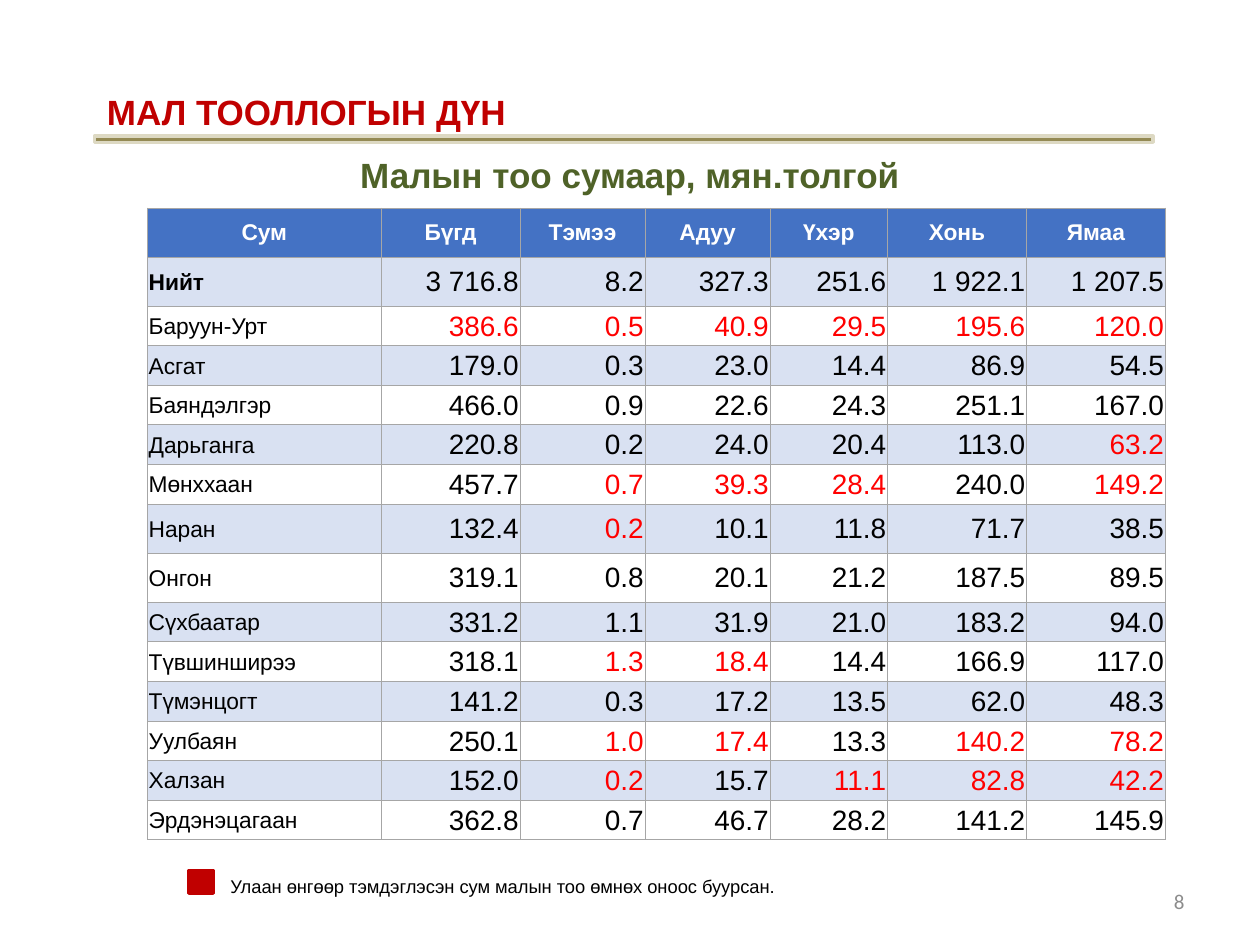
from lxml.etree import SubElement
from pptx import Presentation
from pptx.dml.color import RGBColor
from pptx.enum.shapes import MSO_SHAPE as SHAPE
from pptx.enum.text import MSO_ANCHOR as ANCHOR, PP_ALIGN as ALIGN
from pptx.oxml.ns import qn
from pptx.util import Inches, Pt

HEADER = ["Сум", "Бүгд", "Тэмээ", "Адуу", "Үхэр", "Хонь", "Ямаа"]
DECLINE = "*"
HERDS = [
    ("Нийт", "3 716.8", "8.2", "327.3", "251.6", "1 922.1", "1 207.5"),
    ("Баруун-Урт", "386.6*", "0.5*", "40.9*", "29.5*", "195.6*", "120.0*"),
    ("Асгат", "179.0", "0.3", "23.0", "14.4", "86.9", "54.5"),
    ("Баяндэлгэр", "466.0", "0.9", "22.6", "24.3", "251.1", "167.0"),
    ("Дарьганга", "220.8", "0.2", "24.0", "20.4", "113.0", "63.2*"),
    ("Мөнххаан", "457.7", "0.7*", "39.3*", "28.4*", "240.0", "149.2*"),
    ("Наран", "132.4", "0.2*", "10.1", "11.8", "71.7", "38.5"),
    ("Онгон", "319.1", "0.8", "20.1", "21.2", "187.5", "89.5"),
    ("Сүхбаатар", "331.2", "1.1", "31.9", "21.0", "183.2", "94.0"),
    ("Түвшинширээ", "318.1", "1.3*", "18.4*", "14.4", "166.9", "117.0"),
    ("Түмэнцогт", "141.2", "0.3", "17.2", "13.5", "62.0", "48.3"),
    ("Уулбаян", "250.1", "1.0*", "17.4*", "13.3", "140.2*", "78.2*"),
    ("Халзан", "152.0", "0.2*", "15.7", "11.1*", "82.8*", "42.2*"),
    ("Эрдэнэцагаан", "362.8", "0.7", "46.7", "28.2", "141.2", "145.9"),
]

DARK_RED = RGBColor(0xC0, 0x00, 0x00)
RED = RGBColor(0xFF, 0x00, 0x00)
GREEN = RGBColor(0x4F, 0x62, 0x28)
OLIVE = RGBColor(0x94, 0x8A, 0x54)
SAND = RGBColor(0xDD, 0xD9, 0xC3)
BLUE = RGBColor(0x44, 0x72, 0xC4)
PALE_BLUE = RGBColor(0xD9, 0xE1, 0xF2)
GRAY = RGBColor(0x8C, 0x8C, 0x8C)
BLACK = RGBColor(0, 0, 0)
WHITE = RGBColor(0xFF, 0xFF, 0xFF)
BORDER = "A6A6A6"

TEXTS = [
    ("8", (7.17, 6.95, 2.33, 0.4), ALIGN.RIGHT, ANCHOR.MIDDLE,
     {"size": Pt(12), "name": "Calibri"}, GRAY),
    ("МАЛ ТООЛЛОГЫН ДҮН", (0.75, 0.67, 9.25, 0.44), ALIGN.JUSTIFY, ANCHOR.TOP,
     {"size": Pt(20), "name": "Arial", "bold": True}, DARK_RED),
    ("Малын тоо сумаар, мян.толгой", (0.75, 1.17, 8.5, 0.44), ALIGN.CENTER, ANCHOR.TOP,
     {"size": Pt(20), "name": "Arial", "bold": True}, GREEN),
    ("Улаан өнгөөр тэмдэглэсэн сум малын тоо өмнөх оноос буурсан.",
     (1.73, 6.9, 5.88, 0.29), ALIGN.JUSTIFY, ANCHOR.TOP,
     {"size": Pt(10.5), "name": "Arial"}, BLACK),
]
BARS = [
    ((0.75, 1.08, 8.4, 0.05), OLIVE, SAND),
    ((1.5, 6.91, 0.19, 0.18), DARK_RED, DARK_RED),
]
TABLE_BOX = (1.17, 1.65, 8.08, 5.02)
COL_SHARES = [1.85, 1.1, 0.99, 0.99, 0.93, 1.1, 1.1]
TALL_ROWS = {0, 1, 7, 8}
TALL = 0.39


def write(p, text, align, font, color):
    p.alignment = align
    r = p.add_run()
    r.text = text
    for key, value in font.items():
        setattr(r.font, key, value)
    r.font.color.rgb = color


def add_text(s, text, box, align, anchor, font, color):
    tf = s.shapes.add_textbox(*map(Inches, box)).text_frame
    tf.word_wrap = True
    tf.vertical_anchor = anchor
    write(tf.paragraphs[0], text, align, font, color)


def add_bar(s, box, fill, line):
    sp = s.shapes.add_shape(SHAPE.RECTANGLE, *map(Inches, box))
    sp.shadow.inherit = False
    sp.fill.solid()
    sp.fill.fore_color.rgb = fill
    sp.line.color.rgb = line
    sp.line.width = Pt(2)


def add_borders(cell):
    props = cell._tc.get_or_add_tcPr()
    for i, side in enumerate(("lnL", "lnR", "lnT", "lnB")):
        ln = props.makeelement(qn(f"a:{side}"), {"w": str(Pt(0.5))})
        solid = SubElement(ln, qn("a:solidFill"))
        SubElement(solid, qn("a:srgbClr"), val=BORDER)
        props.insert(i, ln)


def fill_cell(cell, row, col, value):
    head, label = row == 0, col == 0
    color = WHITE if head else RED if value.endswith(DECLINE) else BLACK
    align = ALIGN.CENTER if head else ALIGN.LEFT if label else ALIGN.RIGHT
    font = {"size": Pt(13 if head or label else 16), "name": "Arial",
            "bold": head or (label and row == 1)}
    margins = {"margin_left": 0.01, "margin_right": 0.01, "margin_top": 0.01, "margin_bottom": 0}
    for key, size in margins.items():
        setattr(cell, key, Inches(size))
    cell.vertical_anchor = ANCHOR.MIDDLE
    cell.fill.solid()
    cell.fill.fore_color.rgb = BLUE if head else PALE_BLUE if row % 2 else WHITE
    add_borders(cell)
    write(cell.text_frame.paragraphs[0], value.rstrip(DECLINE), align, font, color)


def add_herd_table(s):
    rows = [HEADER, *HERDS]
    width, height = TABLE_BOX[2:]
    short = (height - TALL * len(TALL_ROWS)) / (len(rows) - len(TALL_ROWS))
    table = s.shapes.add_table(len(rows), len(HEADER), *map(Inches, TABLE_BOX)).table
    for column, share in zip(table.columns, COL_SHARES):
        column.width = Inches(width * share / sum(COL_SHARES))
    for i, values in enumerate(rows):
        table.rows[i].height = Inches(TALL if i in TALL_ROWS else short)
        for j, value in enumerate(values):
            fill_cell(table.cell(i, j), i, j, value)


def main():
    prs = Presentation()
    prs.slide_width, prs.slide_height = Inches(10), Inches(7.5)
    s = prs.slides.add_slide(prs.slide_layouts[6])
    for text in TEXTS:
        add_text(s, *text)
    for bar in BARS:
        add_bar(s, *bar)
    add_herd_table(s)
    prs.save("out.pptx")


if __name__ == "__main__":
    main()
